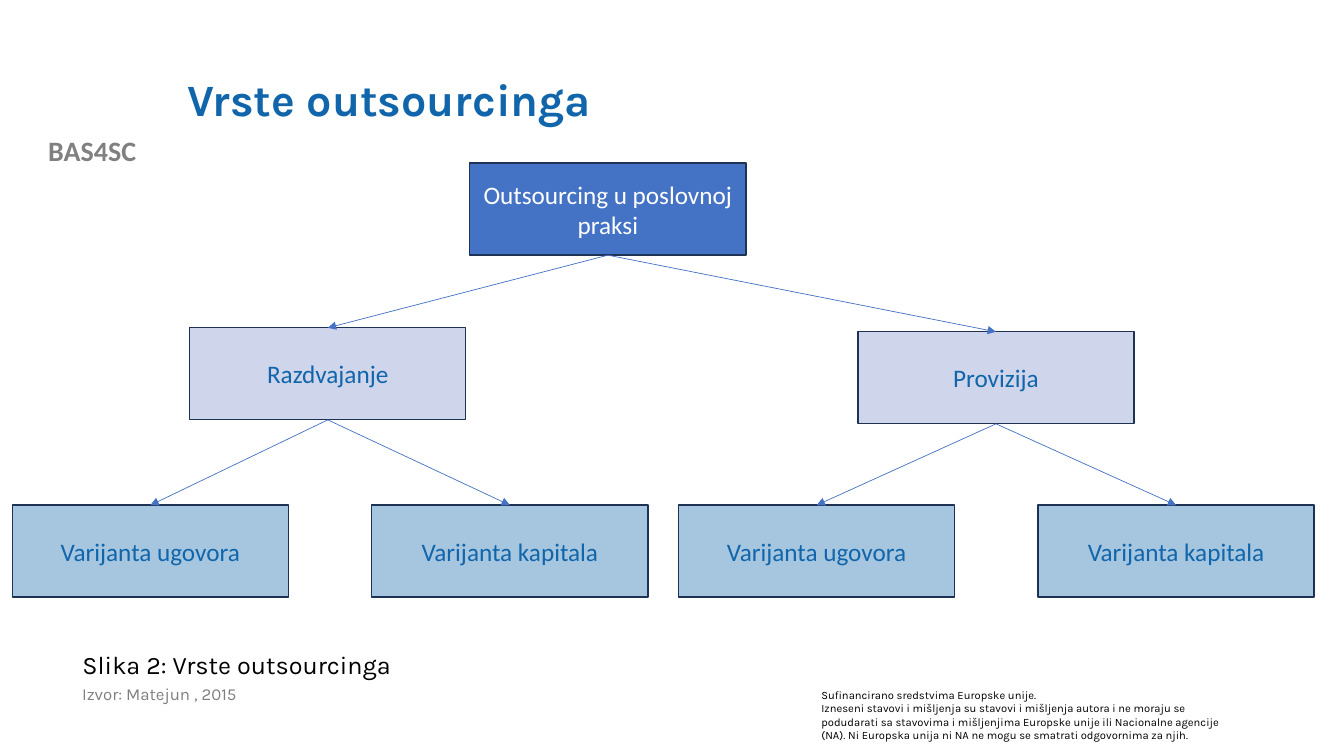
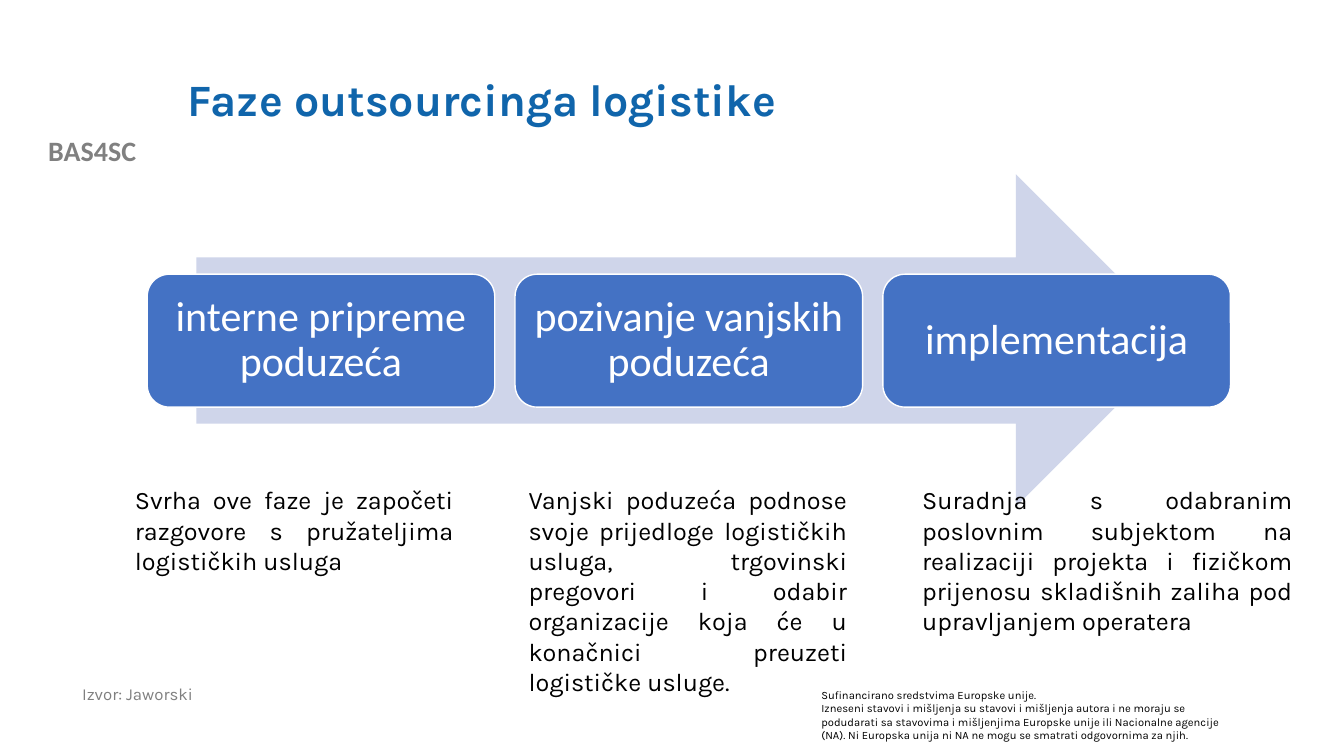
from dataclasses import dataclass

from lxml import etree
from pptx import Presentation
from pptx.dml.color import RGBColor
from pptx.enum.shapes import MSO_CONNECTOR, MSO_SHAPE
from pptx.enum.text import MSO_ANCHOR, PP_ALIGN
from pptx.oxml.ns import qn
from pptx.util import Cm, Pt

RECT, ROUND = MSO_SHAPE.RECTANGLE, MSO_SHAPE.ROUNDED_RECTANGLE
ARROW = MSO_SHAPE.RIGHT_ARROW
STRAIGHT = MSO_CONNECTOR.STRAIGHT
TOP, MIDDLE = MSO_ANCHOR.TOP, MSO_ANCHOR.MIDDLE
LEFT, CENTER, JUSTIFY = PP_ALIGN.LEFT, PP_ALIGN.CENTER, PP_ALIGN.JUSTIFY
SITE_TOP, SITE_BOTTOM = 0, 2


@dataclass(frozen=True)
class Theme:
    head: str = "Karla"
    body: str = "Calibri"
    title: str = "1065AB"
    blue: str = "4472C4"
    pale: str = "CFD5EA"
    sky: str = "A6C6E0"
    edge: str = "1E3256"
    white: str = "FFFFFF"
    black: str = "000000"
    label: str = "808080"
    muted: str = "7F7F7F"
    title_size: int = 32
    phase_size: int = 30
    label_size: int = 20
    text_size: int = 18
    source_size: int = 12
    footer_size: int = 8


T = Theme()

# Content
PROJECT = "BAS4SC"
FOOTER = [
    "Sufinancirano sredstvima Europske unije.",
    "Izneseni stavovi i mišljenja su stavovi i mišljenja autora i ne moraju se "
    "podudarati sa stavovima i mišljenjima Europske unije ili Nacionalne agencije "
    "(NA). Ni Europska unija ni NA ne mogu se smatrati odgovornima za njih.",
]
ROOT = ("Outsourcing u poslovnoj praksi", 11.84, 4.11)
VARIANTS = ["Varijanta ugovora", "Varijanta kapitala"]
# Branch text, left, top, left of its first variant
BRANCHES = [
    ("Razdvajanje", 4.78, 8.26, 0.31),
    ("Provizija", 21.62, 8.36, 17.1),
]
CAPTION = "Slika 2: Vrste outsourcinga"
# Phase, description, width of the description
PHASES = [
    ("interne pripreme poduzeća",
     "Svrha ove faze je započeti razgovore s pružateljima logističkih usluga", 8.53),
    ("pozivanje vanjskih poduzeća",
     "Vanjski poduzeća podnose svoje prijedloge logističkih usluga, trgovinski "
     "pregovori i odabir organizacije koja će u konačnici preuzeti logističke usluge.",
     8.53),
    ("implementacija",
     "Suradnja s odabranim poslovnim subjektom na realizaciji projekta i fizičkom "
     "prijenosu skladišnih zaliha pod upravljanjem operatera", 9.83),
]

# Layout in centimetres
NODE_W, NODE_H = 6.96, 2.32
VARIANT_TOP, VARIANT_STEP = 12.73, 9.06
CARD_LEFT, CARD_TOP, CARD_W, CARD_H, CARD_STEP = 3.71, 6.91, 8.76, 3.35, 9.27
DESC_LEFT, DESC_TOP, DESC_H, DESC_STEP = 3.15, 12.09, 4.88, 9.92


# Helpers
def rgb(value):
    return RGBColor.from_string(value)


def write(sp, lines, size, color, font=T.head, bold=False, align=LEFT,
          anchor=TOP, spacing=None):
    tf = sp.text_frame
    tf.word_wrap = True
    tf.vertical_anchor = anchor
    for i, line in enumerate(lines):
        p = tf.paragraphs[0] if i == 0 else tf.add_paragraph()
        p.alignment = align
        if spacing:
            p.line_spacing = spacing
        r = p.add_run()
        r.text = line
        r.font.name, r.font.size, r.font.bold = font, Pt(size), bold
        r.font.color.rgb = rgb(color)


def add_text(slide, box, lines, size, color, **style):
    sp = slide.shapes.add_textbox(*map(Cm, box))
    write(sp, lines, size, color, **style)


def add_shape(slide, kind, box, fill, line=None):
    sp = slide.shapes.add_shape(kind, *map(Cm, box))
    sp.shadow.inherit = False
    sp.fill.solid()
    sp.fill.fore_color.rgb = rgb(fill)
    if line:
        sp.line.color.rgb = rgb(line)
        sp.line.width = Pt(1)
    else:
        sp.line.fill.background()
    return sp


def add_node(slide, text, left, top, fill, color):
    sp = add_shape(slide, RECT, (left, top, NODE_W, NODE_H), fill, T.edge)
    write(sp, [text], T.text_size, color, font=T.body, align=CENTER, anchor=MIDDLE)
    return sp


def link(slide, parent, child):
    line = slide.shapes.add_connector(STRAIGHT, 0, 0, 0, 0)
    line.begin_connect(parent, SITE_BOTTOM)
    line.end_connect(child, SITE_TOP)
    line.line.color.rgb = rgb(T.blue)
    line.line.width = Pt(0.5)
    etree.SubElement(line.line._get_or_add_ln(), qn("a:tailEnd"), type="triangle")
    etree.SubElement(line._element.spPr, qn("a:effectLst"))


def add_slide(prs, title, source):
    slide = prs.slides.add_slide(prs.slide_layouts[6])
    add_text(slide, (0, 3.25, 4.65, 1.12), [PROJECT], T.label_size, T.label,
             font=T.body, bold=True, align=CENTER)
    add_text(slide, (20.45, 17.22, 11.1, 1.63), FOOTER, T.footer_size, T.black)
    add_text(slide, (4.47, 1.02, 27.08, 3.1), [title], T.title_size, T.title,
             bold=True, anchor=MIDDLE, spacing=0.9)
    add_text(slide, (1.82, 17.17, 12.73, 1.32), [source], T.source_size, T.muted,
             spacing=0.9)
    return slide


# Slides
def build_types(prs):
    slide = add_slide(prs, "Vrste outsourcinga", "Izvor: Matejun , 2015")
    root = add_node(slide, *ROOT, T.blue, T.white)
    for text, left, top, variant_left in BRANCHES:
        branch = add_node(slide, text, left, top, T.pale, T.title)
        link(slide, root, branch)
        for i, variant in enumerate(VARIANTS):
            leaf = add_node(slide, variant, variant_left + i * VARIANT_STEP,
                            VARIANT_TOP, T.sky, T.title)
            link(slide, branch, leaf)
    add_text(slide, (1.83, 16.23, 11.15, 1.02), [CAPTION], T.text_size, T.black)


def build_phases(prs):
    slide = add_slide(prs, "Faze outsourcinga logistike", "Izvor: Jaworski")
    add_shape(slide, ARROW, (4.95, 4.39, 24.84, 8.38), T.pale)
    for i, (phase, description, width) in enumerate(PHASES):
        card = add_shape(slide, ROUND, (CARD_LEFT + i * CARD_STEP, CARD_TOP,
                                        CARD_W, CARD_H), T.blue, T.white)
        tf = card.text_frame
        tf.margin_left = tf.margin_right = Cm(0.28)
        write(card, [phase], T.phase_size, T.white, font=T.body, align=CENTER,
              anchor=MIDDLE, spacing=0.9)
        add_text(slide, (DESC_LEFT + i * DESC_STEP, DESC_TOP, width, DESC_H),
                 [description], T.text_size, T.black, align=JUSTIFY)


def main():
    prs = Presentation()
    prs.slide_width, prs.slide_height = Cm(33.87), Cm(19.05)
    build_types(prs)
    build_phases(prs)
    prs.save("out.pptx")


if __name__ == "__main__":
    main()
